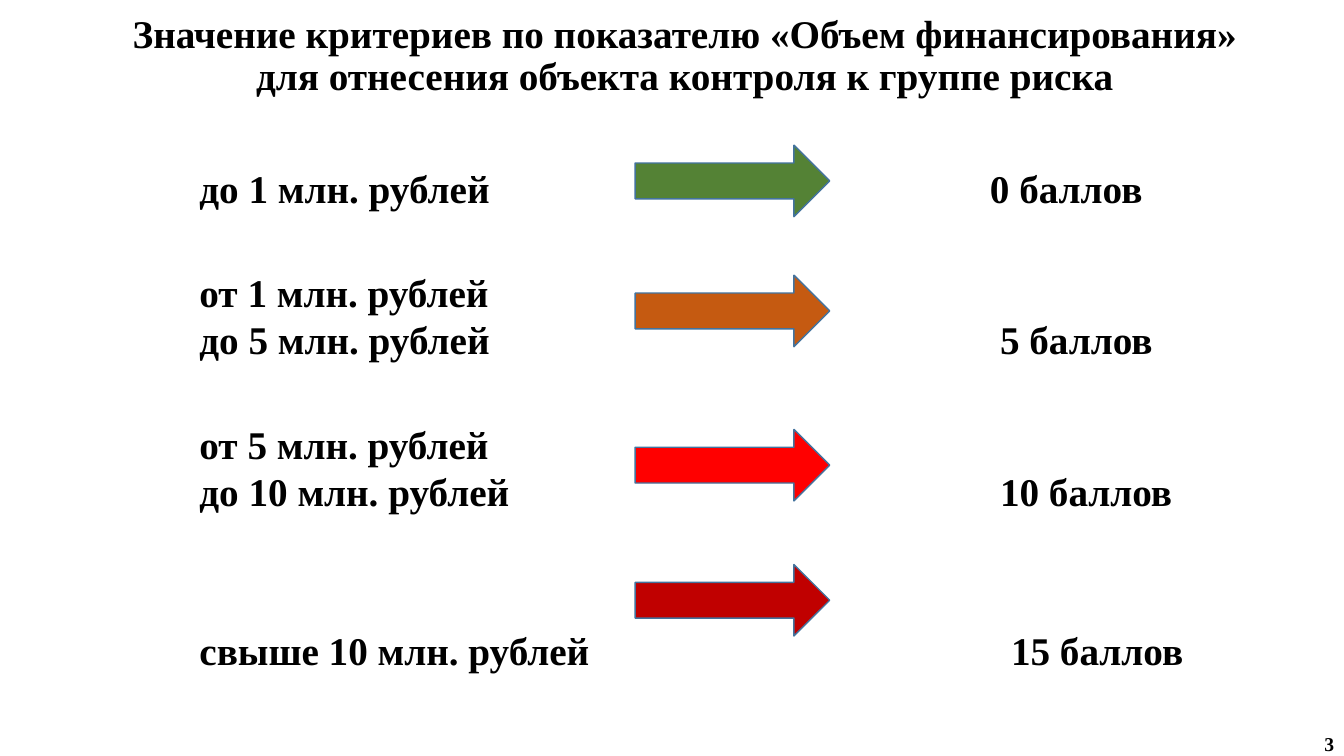
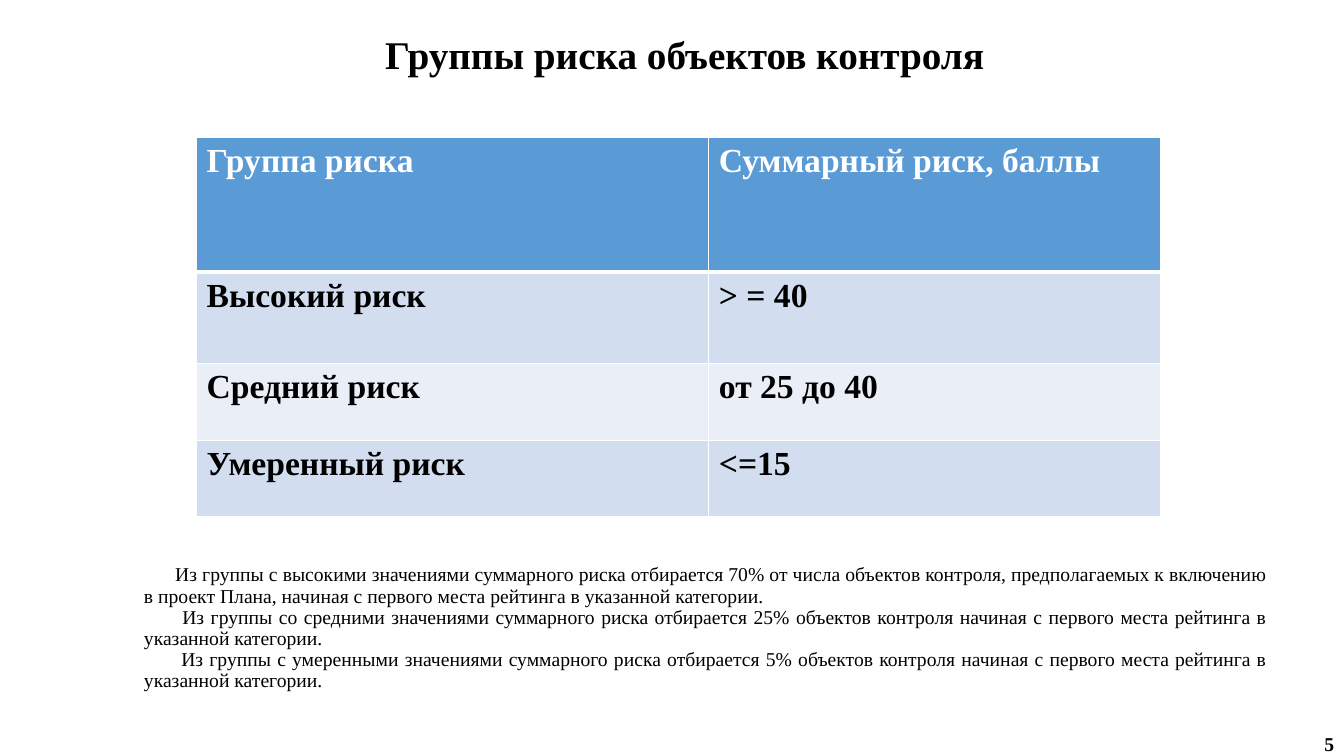
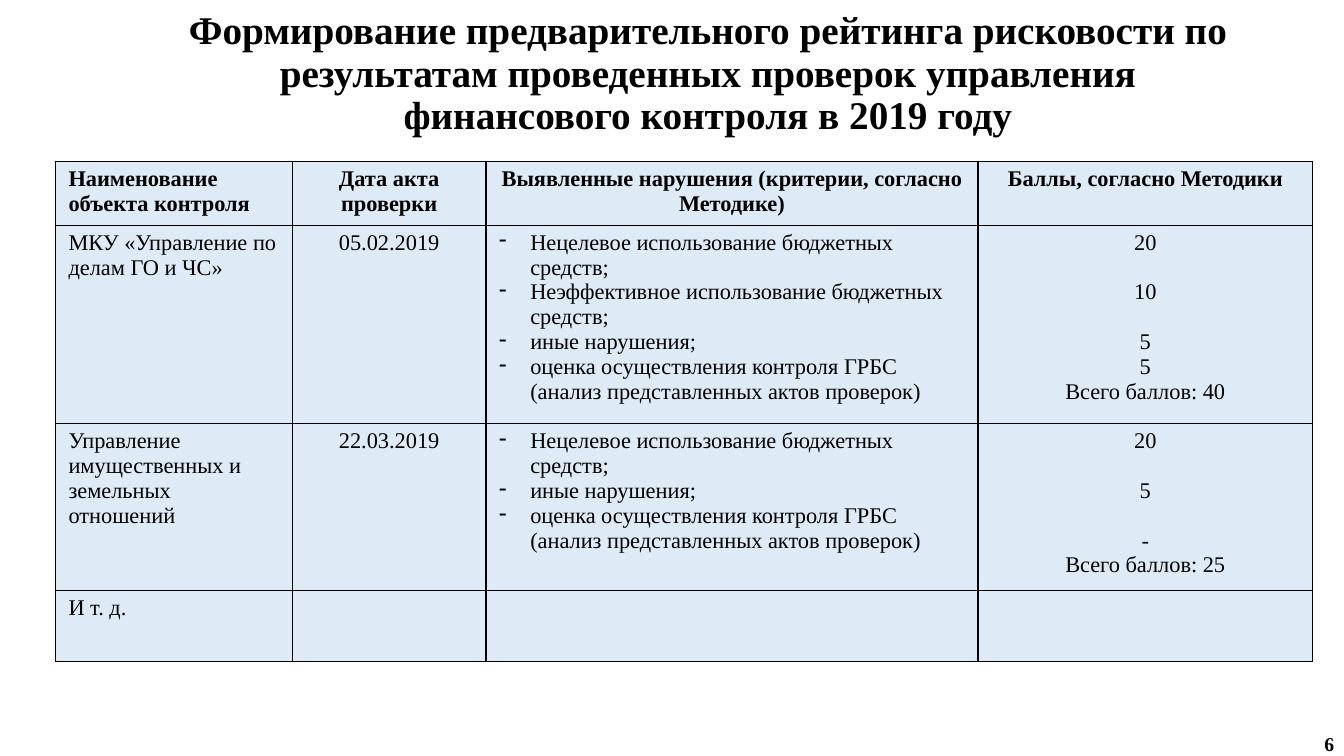
from pptx import Presentation, util as u
from pptx.dml.color import RGBColor
from pptx.enum import shapes, text
from pptx.oxml import parse_xml
from pptx.oxml.ns import nsdecls

# Shared look
COLOURS = {
    "ink": "000000", "paper": "FFFFFF", "arrow line": "43739E",
    "none": "548235", "low": "C55A11", "medium": "FF0000", "high": "C00000",
    "head": "5B9BD5", "odd": "D2DEEF", "even": "EAEFF7", "pale": "DEEBF7",
}
FONT = "Times New Roman"
WIDTH, HEIGHT = 13.33, 7.5
TITLE_AT = (0.86, 0.14, 11.86, 0.84)
NUMBER_AT = (12.65, 7.14, 0.68, 0.47)
LEFT, CENTER = text.PP_ALIGN.LEFT, text.PP_ALIGN.CENTER
RIGHT, JUSTIFY = text.PP_ALIGN.RIGHT, text.PP_ALIGN.JUSTIFY
TOP, MIDDLE, BOTTOM = (text.MSO_ANCHOR.TOP, text.MSO_ANCHOR.MIDDLE,
                       text.MSO_ANCHOR.BOTTOM)

# Content: slide 1
FUNDING_TITLE = ("Значение критериев по показателю «Объем финансирования» "
                 "для отнесения объекта контроля к группе риска")
# lines of the criterion, points, colour, arrow top, text bottom, points left
FUNDING = [
    (["до 1 млн. рублей"], "0 баллов", "none", 1.44, 2.1, 9.72),
    (["от 1 млн. рублей", "до 5 млн. рублей"], "5 баллов", "low", 2.73, 3.6, 9.82),
    (["от 5 млн. рублей", "до 10 млн. рублей"], "10 баллов", "medium", 4.26, 5.1, 9.82),
    (["свыше 10 млн. рублей"], "15 баллов", "high", 5.6, 6.68, 9.93),
]

# Content: slide 2
GROUPS_TITLE = "Группы риска объектов контроля"
GROUPS = [
    ("Группа риска", "Суммарный риск, баллы"),
    ("Высокий риск", "> = 40"),
    ("Средний риск", "от 25 до 40"),
    ("Умеренный риск", "<=15"),
]
# text, first-line indent
SELECTION = [
    ("Из группы с высокими значениями суммарного риска отбирается 70% от числа "
     "объектов контроля, предполагаемых к включению в проект Плана, начиная с "
     "первого места рейтинга в указанной категории.", 0.31),
    ("Из группы со средними значениями суммарного риска отбирается 25% объектов "
     "контроля начиная с первого места рейтинга в указанной категории.", 0.38),
    ("Из группы с умеренными значениями суммарного риска отбирается 5% объектов "
     "контроля начиная с первого места рейтинга в указанной категории.", 0.37),
]

# Content: slide 3
RATING_TITLE = ("Формирование предварительного рейтинга рисковости по результатам "
                "проведенных проверок управления финансового контроля в 2019 году")
MISUSE = "Нецелевое использование бюджетных средств;"
WASTE = "Неэффективное использование бюджетных средств;"
OTHER = "иные нарушения;"
REVIEW = "оценка осуществления контроля ГРБС (анализ представленных актов проверок)"
RATING = [
    (["Наименование объекта контроля"], ["Дата акта проверки"],
     ["Выявленные нарушения (критерии, согласно Методике)"],
     ["Баллы, согласно Методики"]),
    (["МКУ «Управление по делам ГО и ЧС»"], ["05.02.2019"],
     [MISUSE, WASTE, OTHER, REVIEW], ["20", "10", "5", "5", "Всего баллов: 40"]),
    (["Управление имущественных и земельных отношений"], ["22.03.2019"],
     [MISUSE, OTHER, REVIEW], ["20", "5", "-", "Всего баллов: 25"]),
    (["И т. д."], [], [], []),
]
# scores set one line lower, beside the violation they belong to: row -> indexes
LOWERED = {1: (1, 2), 2: (1, 2)}


def rgb(name):
    return RGBColor.from_string(COLOURS[name])


def inches(values):
    return [u.Inches(v) for v in values]


def write(frame, lines, size, bold=True, colour="ink", **paragraph_format):
    """Fill a text frame with one paragraph per line."""
    for i, line in enumerate(lines):
        para = frame.paragraphs[0] if i == 0 else frame.add_paragraph()
        for key, value in paragraph_format.items():
            setattr(para, key, value)
        run = para.add_run()
        run.text = line
        for key, value in {"name": FONT, "size": u.Pt(size), "bold": bold}.items():
            setattr(run.font, key, value)
        run.font.color.rgb = rgb(colour)


def indent(para, margin, first, bullet=None):
    props = para._p.get_or_add_pPr()
    props.set("marL", str(u.Inches(margin)))
    props.set("indent", str(u.Inches(first)))
    if bullet:
        props.append(parse_xml(f'<a:buChar {nsdecls("a")} char="{bullet}"/>'))


def add_text(slide, at, lines, size, anchor=MIDDLE, **style):
    frame = slide.shapes.add_textbox(*inches(at)).text_frame
    frame.word_wrap, frame.vertical_anchor = True, anchor
    write(frame, lines, size, **style)
    return frame


def add_slide(deck, title, number, title_at=TITLE_AT):
    slide = deck.slides.add_slide(deck.slide_layouts[5])
    heading = slide.shapes.title
    for key, value in zip(("left", "top", "width", "height"), inches(title_at)):
        setattr(heading, key, value)
    frame = heading.text_frame
    for key, value in {"word_wrap": True, "vertical_anchor": MIDDLE,
                       "auto_size": text.MSO_AUTO_SIZE.NONE}.items():
        setattr(frame, key, value)
    write(frame, [title], 28, alignment=CENTER, line_spacing=0.9)
    add_text(slide, NUMBER_AT, [str(number)], 14, alignment=RIGHT)
    return slide


def add_grid(slide, left, top, columns, rows):
    table = slide.shapes.add_table(len(rows), len(columns), *inches(
        (left, top, sum(columns), sum(rows)))).table
    table.first_row = table.horz_banding = False
    for column, width in zip(table.columns, inches(columns)):
        column.width = width
    for row, height in zip(table.rows, inches(rows)):
        row.height = height
    return table


def paint(cell, fill, border, top=1, bottom=1):
    cell.fill.solid()
    cell.fill.fore_color.rgb = rgb(fill)
    props = cell._tc.get_or_add_tcPr()
    for i, (side, width) in enumerate(zip("LRTB", (1, 1, top, bottom))):
        props.insert(i, parse_xml(
            f'<a:ln{side} {nsdecls("a")} w="{u.Pt(width)}"><a:solidFill>'
            f'<a:srgbClr val="{COLOURS[border]}"/></a:solidFill></a:ln{side}>'))


def funding_slide(deck):
    slide = add_slide(deck, FUNDING_TITLE, 3)
    for criterion, points, colour, arrow_top, bottom, points_left in FUNDING:
        # Criterion and points share a bottom line
        for left, width, lines in ((1.88, 4.4, criterion), (points_left, 2.5, [points])):
            frame = add_text(slide, (left, bottom - 1, width, 1), lines, 28, BOTTOM)
            frame.margin_bottom = 0
        arrow = slide.shapes.add_shape(shapes.MSO_SHAPE.RIGHT_ARROW,
                                       *inches((6.3, arrow_top, 1.93, 0.71)))
        arrow.shadow.inherit = False
        arrow.fill.solid()
        arrow.fill.fore_color.rgb = rgb(colour)
        arrow.line.color.rgb = rgb("arrow line")
        arrow.line.width = u.Pt(1)


def groups_slide(deck):
    slide = add_slide(deck, GROUPS_TITLE, 5)
    table = add_grid(slide, 1.95, 1.36, (5.08, 4.48), (1.34, 0.91, 0.76, 0.76))
    for r, row in enumerate(GROUPS):
        fill = "head" if r == 0 else ("even", "odd")[r % 2]
        for c, label in enumerate(row):
            cell = table.cell(r, c)
            paint(cell, fill, "paper", 3 if r == 1 else 1, 3 if r == 0 else 1)
            write(cell.text_frame, [label], 24, colour="ink" if r else "paper")
    # Selection rules under the table
    rules = add_text(slide, (1.33, 5.43, 11.34, 1.61), [rule for rule, _ in SELECTION],
                     14, bold=False, alignment=JUSTIFY, line_spacing=0.9)
    for para, (_, first) in zip(rules.paragraphs, SELECTION):
        indent(para, 0, first)


def rating_slide(deck):
    slide = add_slide(deck, RATING_TITLE, 6, (1.58, 0.22, 10.88, 1.04))
    table = add_grid(slide, 0.55, 1.6, (2.35, 1.92, 4.88, 3.32), (0.59, 1.97, 1.58, 0.7))
    for r, row in enumerate(RATING):
        for c, lines in enumerate(row):
            cell = table.cell(r, c)
            cell.margin_left = cell.margin_right = u.Inches(0.13)
            paint(cell, "pale", "ink")
            listed = c == 2 and r > 0
            write(cell.text_frame, lines, 16, bold=r == 0,
                  alignment=LEFT if c == 0 or listed else CENTER)
            paras = cell.text_frame.paragraphs
            if listed and lines:
                for para in paras:
                    indent(para, 0.31, -0.31, "-")
            if c == 3:
                for i in LOWERED.get(r, ()):
                    paras[i].space_before = u.Pt(17.7)


def main():
    deck = Presentation()
    deck.slide_width, deck.slide_height = inches((WIDTH, HEIGHT))
    for build in (funding_slide, groups_slide, rating_slide):
        build(deck)
    deck.save("out.pptx")


if __name__ == "__main__":
    main()
